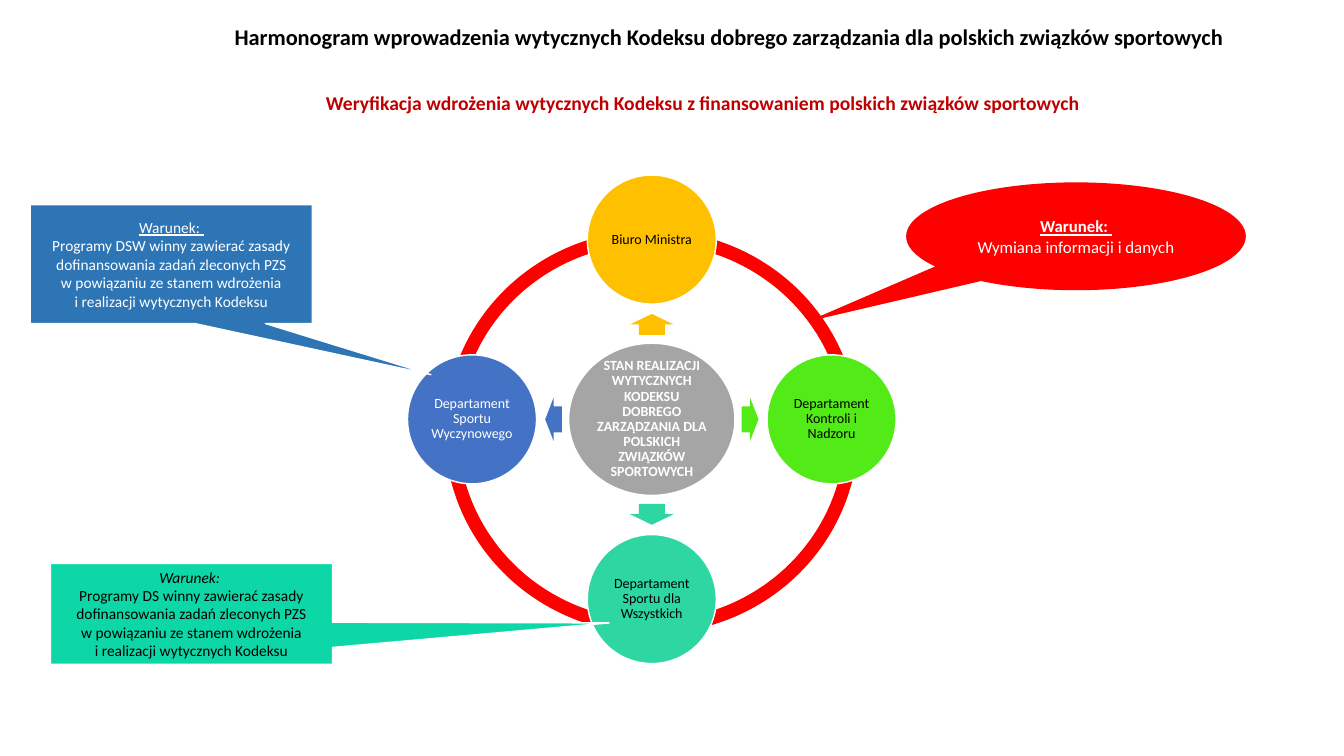
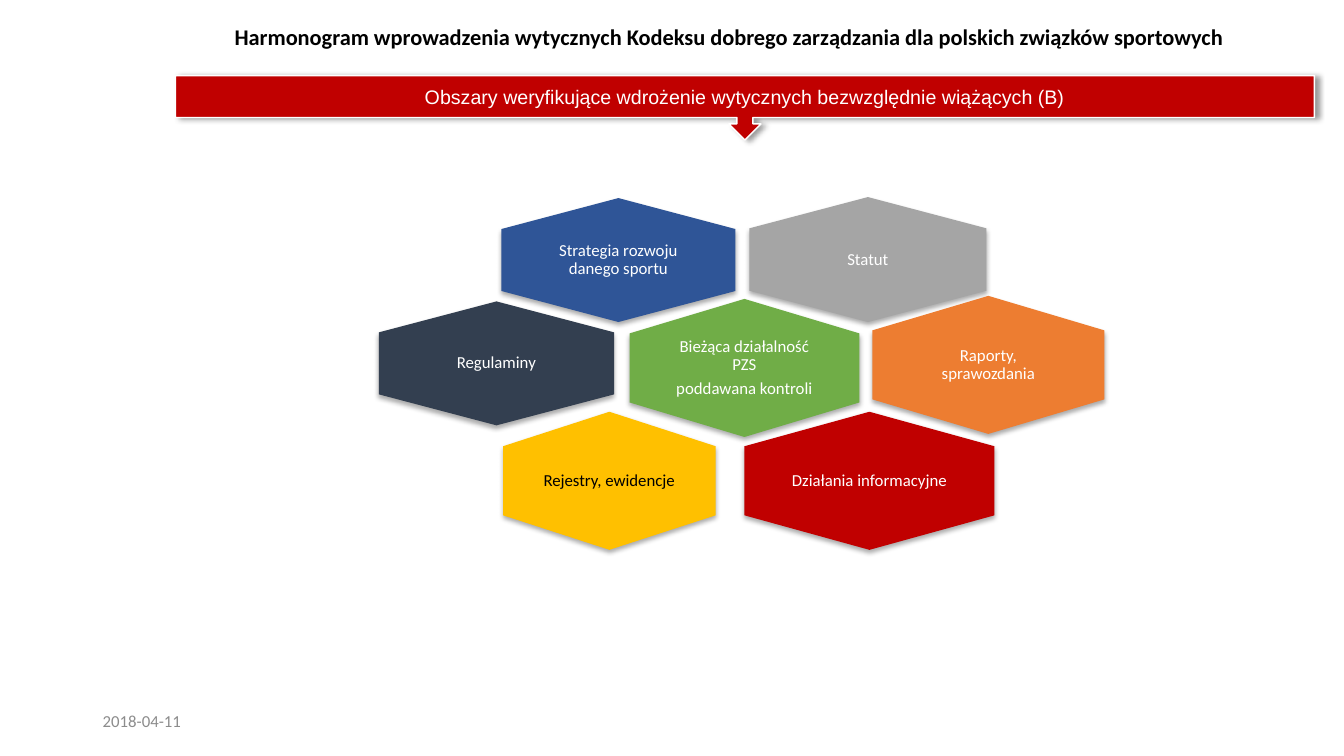
from math import cos, radians, sin

from lxml import etree
from pptx import Presentation
from pptx import util as u
from pptx.dml.color import RGBColor
from pptx.enum import shapes, text
from pptx.oxml import ns

WIDE, HIGH = u.Inches(13.33), u.Inches(7.5)
COLS, ROWS = 160, 90
KIND = shapes.MSO_SHAPE
INK = {
    "black": "000000", "white": "FFFFFF", "gray": "A5A5A5", "date": "8C8C8C",
    "red": "FF0000", "wine": "C00000", "gold": "FFC000", "lime": "53EB17",
    "mint": "2ED7A1", "teal": "0DD7A7", "blue": "4472C4", "steel": "2E75B6",
    "navy": "2F5597", "slate": "333F50", "green": "70AD47", "orange": "ED7D31",
}
TITLE = ("Harmonogram wprowadzenia wytycznych Kodeksu dobrego zarządzania "
         "dla polskich związków sportowych")
RULES = ("zawierać zasady dofinansowania zadań zleconych PZS\n"
         "w powiązaniu ze stanem wdrożenia\ni realizacji wytycznych Kodeksu")
HUB = (77.6, 49.92)
RING = 21.4


def shade(name):
    return RGBColor.from_string(INK[name])


def place(left, top, width, height):
    return (int(left * WIDE / COLS), int(top * HIGH / ROWS),
            int(width * WIDE / COLS), int(height * HIGH / ROWS))


def around(mid, width, height):
    return mid[0] - width / 2, mid[1] - height / 2, width, height


def write(shape, paras, size, color, font="Calibri", left=False,
          pad=None, lead=None, after=0, top=False):
    frame = shape.text_frame
    frame.word_wrap = True
    frame.vertical_anchor = text.MSO_ANCHOR.TOP if top else text.MSO_ANCHOR.MIDDLE
    if pad is not None:
        frame.margin_left = frame.margin_right = u.Inches(pad)
        frame.margin_top = frame.margin_bottom = u.Inches(pad)
    for num, (words, marks) in enumerate(paras):
        para = frame.add_paragraph() if num else frame.paragraphs[0]
        para.alignment = text.PP_ALIGN.LEFT if left else text.PP_ALIGN.CENTER
        para.space_after = u.Pt(after)
        if lead:
            para.line_spacing = lead
        for row, line in enumerate(words.split("\n")):
            if row:
                para.add_line_break()
            run = para.add_run()
            run.text = line
            run.font.name = font
            run.font.size = u.Pt(size)
            run.font.color.rgb = shade(color)
            run.font.bold = "b" in marks
            run.font.italic = "i" in marks
            run.font.underline = "u" in marks


def label(slide, box, paras, size, color, **style):
    item = slide.shapes.add_textbox(*place(*box))
    write(item, paras, size, color, **style)


def draw(slide, kind, box, fill, line=None, tweaks=(), turn=0):
    item = slide.shapes.add_shape(kind, *place(*box))
    item.shadow.inherit = False
    item.fill.solid()
    item.fill.fore_color.rgb = shade(fill)
    if line:
        item.line.color.rgb = shade(line)
        item.line.width = u.Pt(1)
    else:
        item.line.fill.background()
    for num, tweak in enumerate(tweaks):
        item.adjustments[num] = tweak
    item.rotation = turn
    return item


def cast(item, share, blur, dist, angle):
    holder = item._element.spPr.find(ns.qn("a:effectLst"))
    outer = etree.SubElement(
        holder, ns.qn("a:outerShdw"), blurRad=str(u.Pt(blur)),
        dist=str(u.Pt(dist)), dir=str(angle * 60000), rotWithShape="0")
    tint = etree.SubElement(outer, ns.qn("a:srgbClr"), val=INK["black"])
    etree.SubElement(tint, ns.qn("a:alpha"), val=str(share * 1000))


def start(deck):
    slide = deck.slides.add_slide(deck.slide_layouts[6])
    label(slide, (15.36, 1.2, 142.92, 6.72), [(TITLE, "b")], 16, "black", lead=0.9)
    return slide


def disc(slide, mid, width, height, fill, words, color, marks=""):
    item = draw(slide, KIND.OVAL, around(mid, width, height), fill, "white")
    write(item, [(words, marks)], 10, color, pad=0.01, lead=0.9, after=4)


def spoke(slide, angle, reach, length, fill, words, color):
    way = cos(radians(angle)), sin(radians(angle))
    arrow, node = [tuple(h + far * w for h, w in zip(HUB, way))
                   for far in (reach, RING)]
    draw(slide, KIND.RIGHT_ARROW, around(arrow, length, 5.16), fill,
         tweaks=(0.6, 0.5), turn=angle)
    disc(slide, node, 15.36, 15.36, fill, words, color)


def bubble(slide, kind, box, tip, fill, line, paras, size, color):
    item = draw(slide, kind, box, fill, line, tip)
    write(item, paras, size, color)


def cell(slide, mid, width, height, fill, lines, color="white"):
    item = draw(slide, KIND.HEXAGON, around(mid, height, width), fill, turn=90)
    cast(item, 32, 3.5, 2.2, 90)
    label(slide, around(mid, width * 2 / 3, height * 2 / 3),
          [(line, "") for line in lines], 12, color, pad=0.04, lead=0.9, after=4)


def wheel(deck):
    slide = start(deck)
    draw(slide, KIND.DONUT, (53.04, 27.48, 49.08, 47.88), "red", "red", (0.03,))
    label(slide, (37.6, 10.2, 97.2, 4.08),
          [("Weryfikacja wdrożenia wytycznych Kodeksu z finansowaniem "
            "polskich związków sportowych", "b")], 14, "wine", left=True, top=True)
    disc(slide, HUB, 19.8, 18.12, "gray",
         "STAN REALIZACJI WYTYCZNYCH KODEKSU DOBREGO ZARZĄDZANIA DLA "
         "POLSKICH ZWIĄZKÓW SPORTOWYCH", "white", "b")
    for part in (
        (270, 11.3, 2.5, "gold", "Biuro Ministra", "black"),
        (0, 11.7, 2, "lime", "Departament Kontroli i Nadzoru", "black"),
        (90, 11.3, 2.5, "mint", "Departament Sportu dla Wszystkich", "black"),
        (180, 11.7, 2, "blue", "Departament Sportu Wyczynowego", "white"),
    ):
        spoke(slide, *part)
    rect, oval = KIND.RECTANGULAR_CALLOUT, KIND.OVAL_CALLOUT
    for part in (
        (rect, (3.6, 24.36, 33.6, 14.16), (0.92, 0.93), "steel", "white",
         [("Warunek: ", "u"), ("Programy DSW winny " + RULES, "")], 11, "white"),
        (rect, (6, 67.08, 33.6, 12), (1.48, 0.09), "teal", "white",
         [("Warunek: ", "i"), ("Programy DS winny " + RULES, "")], 11, "black"),
        (oval, (107.88, 21.72, 40.44, 12.84), (-0.79, 0.79), "red", None,
         [("Warunek: ", "bu"), ("Wymiana informacji i danych", "")], 12, "white"),
    ):
        bubble(slide, *part)


def comb(deck):
    slide = start(deck)
    for part in (
        ((59.1, 43.26), 28, 14.76, "slate", ["Regulaminy"]),
        ((103.32, 30.9), 28.2, 14.88, "gray", ["Statut"]),
        ((73.62, 30.96), 27.84, 14.76, "navy", ["Strategia rozwoju danego sportu"]),
        ((88.62, 43.8), 27.36, 16.44, "green",
         ["Bieżąca działalność PZS", "poddawana kontroli"]),
        ((117.66, 43.44), 27.6, 16.44, "orange", ["Raporty, sprawozdania"]),
        ((103.5, 57.24), 29.76, 16.44, "wine", ["Działania informacyjne"]),
        ((72.54, 57.24), 25.32, 16.44, "gold", ["Rejestry, ewidencje"], "black"),
    ):
        cell(slide, *part)
    label(slide, (11.04, 83.4, 36, 4.8), [("2018-04-11", "")], 12, "date", left=True)
    band = draw(slide, KIND.DOWN_ARROW_CALLOUT, (20.88, 9, 135.6, 7.68),
                "wine", "white")
    cast(band, 40, 4, 3, 0)
    write(band, [("Obszary weryfikujące wdrożenie wytycznych bezwzględnie "
                  "wiążących (B)", "")], 14, "white", font="Arial")


def main():
    deck = Presentation()
    deck.slide_width, deck.slide_height = WIDE, HIGH
    wheel(deck)
    comb(deck)
    deck.save("out.pptx")


if __name__ == "__main__":
    main()
